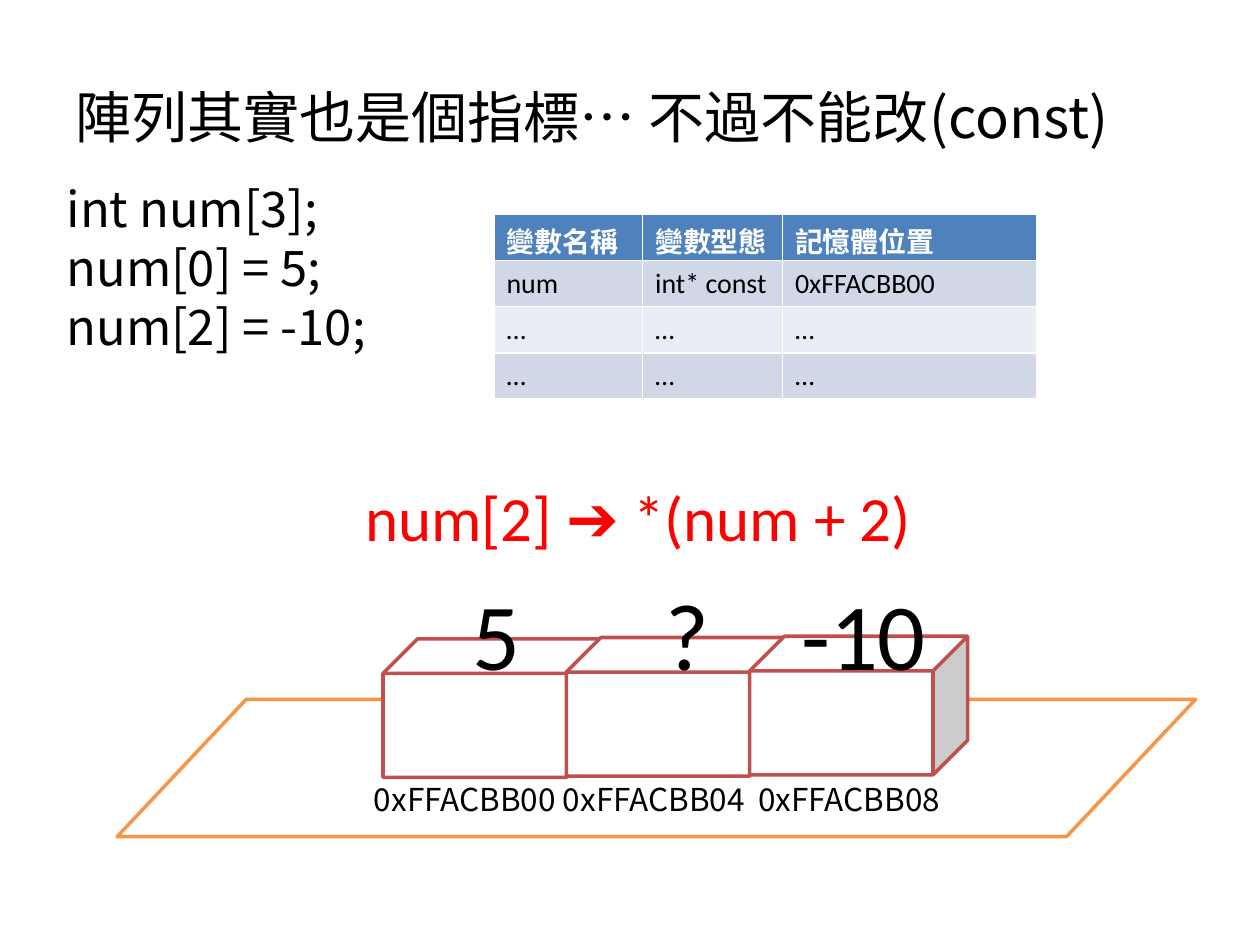
from typing import NamedTuple

import pptx
import pptx.dml.color
import pptx.enum.shapes
import pptx.enum.text
import pptx.util

RGBColor = pptx.dml.color.RGBColor
MSO_SHAPE = pptx.enum.shapes.MSO_SHAPE

BLACK = RGBColor(0, 0, 0)
WHITE = RGBColor(0xFF, 0xFF, 0xFF)
RED = RGBColor(0xFF, 0, 0)
ORANGE = RGBColor(0xF7, 0x96, 0x46)
BRICK = RGBColor(0xC0, 0x50, 0x4D)
HEADER_BLUE = RGBColor(0x4F, 0x81, 0xBD)
BANDS = (RGBColor(0xD0, 0xD8, 0xE8), RGBColor(0xE9, 0xED, 0xF4))

SANS = "Noto Sans CJK SC"
CALIBRI = "Calibri"

# The slide is a grid of 100 columns by 75 rows.
SLIDE_W, SLIDE_H = pptx.util.Inches(10), pptx.util.Inches(7.5)
COL, ROW = SLIDE_W / 100, SLIDE_H / 75

CUBE_LEFT, CUBE_TOP, CUBE_STEP = 30.4, 50.7, 14.55
VARIABLES = (
    ("變數名稱", "變數型態", "記憶體位置"),
    ("num", "int* const", "0xFFACBB00"),
    ("…", "…", "…"),
    ("…", "…", "…"),
)
VARIABLE_COLS = (11.8, 11.1, 20.2)
VARIABLE_ROW = 3.67


class Box(NamedTuple):
    """Left and width in columns, top and height in rows."""
    left: float
    top: float
    width: float
    height: float

    def emu(self) -> tuple[int, int, int, int]:
        return (int(self.left * COL), int(self.top * ROW),
                int(self.width * COL), int(self.height * ROW))


class Label(NamedTuple):
    box: Box
    lines: tuple[str, ...]
    size: float
    font: str
    color: RGBColor = BLACK


class MemoryCell(NamedTuple):
    value: str
    value_left: float
    value_width: float
    address: str
    address_left: float


CELLS = (
    MemoryCell("5", 36.5, 5.9, "0xFFACBB00", 28.7),
    MemoryCell("?", 51.8, 5.5, "0xFFACBB04", 43.7),
    MemoryCell("-10", 62.6, 12, "0xFFACBB08", 59.2),
)


def style(p, size: float, font: str, color: RGBColor, bold: bool = False) -> None:
    p.font.size = pptx.util.Pt(size)
    p.font.name = font
    p.font.bold = bold
    p.font.color.rgb = color


def add_label(s, label: Label) -> None:
    tf = s.shapes.add_textbox(*label.box.emu()).text_frame
    tf.word_wrap = False
    tf.auto_size = pptx.enum.text.MSO_AUTO_SIZE.SHAPE_TO_FIT_TEXT
    tf.text = "\n".join(label.lines)
    for p in tf.paragraphs:
        style(p, label.size, label.font, label.color)


def add_outlined(s, kind: MSO_SHAPE, box: Box, line: RGBColor):
    sp = s.shapes.add_shape(kind, *box.emu())
    sp.shadow.inherit = False
    sp.fill.solid()
    sp.fill.fore_color.rgb = WHITE
    sp.line.color.rgb = line
    sp.line.width = pptx.util.Pt(2)
    return sp


def add_title(s, text: str) -> None:
    title = s.shapes.title
    title.left, title.top, title.width, title.height = Box(5, 3, 90, 12.5).emu()
    title.text_frame.text = text
    title.text_frame.vertical_anchor = pptx.enum.text.MSO_ANCHOR.MIDDLE
    p = title.text_frame.paragraphs[0]
    p.alignment = pptx.enum.text.PP_ALIGN.LEFT
    style(p, 32, SANS, BLACK)


def add_variable_table(s) -> None:
    box = Box(39.2, 17, sum(VARIABLE_COLS), VARIABLE_ROW * len(VARIABLES))
    table = s.shapes.add_table(len(VARIABLES), len(VARIABLE_COLS), *box.emu()).table
    for column, width in zip(table.columns, VARIABLE_COLS):
        column.width = int(width * COL)
    for i, texts in enumerate(VARIABLES):
        header = i == 0
        for j, text in enumerate(texts):
            cell = table.cell(i, j)
            cell.text = text
            cell.fill.solid()
            cell.fill.fore_color.rgb = HEADER_BLUE if header else BANDS[(i - 1) % 2]
            style(cell.text_frame.paragraphs[0], 16, CALIBRI,
                  WHITE if header else BLACK, header)


def add_memory(s) -> None:
    """Draw the row of array cells standing on the memory plane."""
    plane = add_outlined(s, MSO_SHAPE.PARALLELOGRAM, Box(9.3, 55.5, 85.6, 10.9), ORANGE)
    plane.adjustments[0] = 0.94
    for i in range(len(CELLS)):
        box = Box(CUBE_LEFT + i * CUBE_STEP, CUBE_TOP - i * 0.1, 17.3, 11)
        add_outlined(s, MSO_SHAPE.CUBE, box, BRICK)
    for c in CELLS:
        add_label(s, Label(Box(c.value_left, 45.2, c.value_width, 10.1),
                           (c.value,), 54, CALIBRI))
        add_label(s, Label(Box(c.address_left, 61.4, 16.6, 4),
                           (c.address,), 18, SANS))


def main() -> None:
    prs = pptx.Presentation()
    prs.slide_width, prs.slide_height = SLIDE_W, SLIDE_H
    s = prs.slides.add_slide(prs.slide_layouts.get_by_name("Title Only"))
    add_title(s, "陣列其實也是個指標… 不過不能改(const)")
    add_label(s, Label(Box(4.3, 13.7, 27.2, 15.1),
                       ("int num[3];", "num[0] = 5;", "num[2] = -10;"), 28, SANS))
    add_variable_table(s)
    add_memory(s)
    add_label(s, Label(Box(28, 37.5, 46.9, 7.1),
                       ("num[2] ➔ *(num + 2)",), 36, CALIBRI, RED))
    prs.save("out.pptx")


if __name__ == "__main__":
    main()
